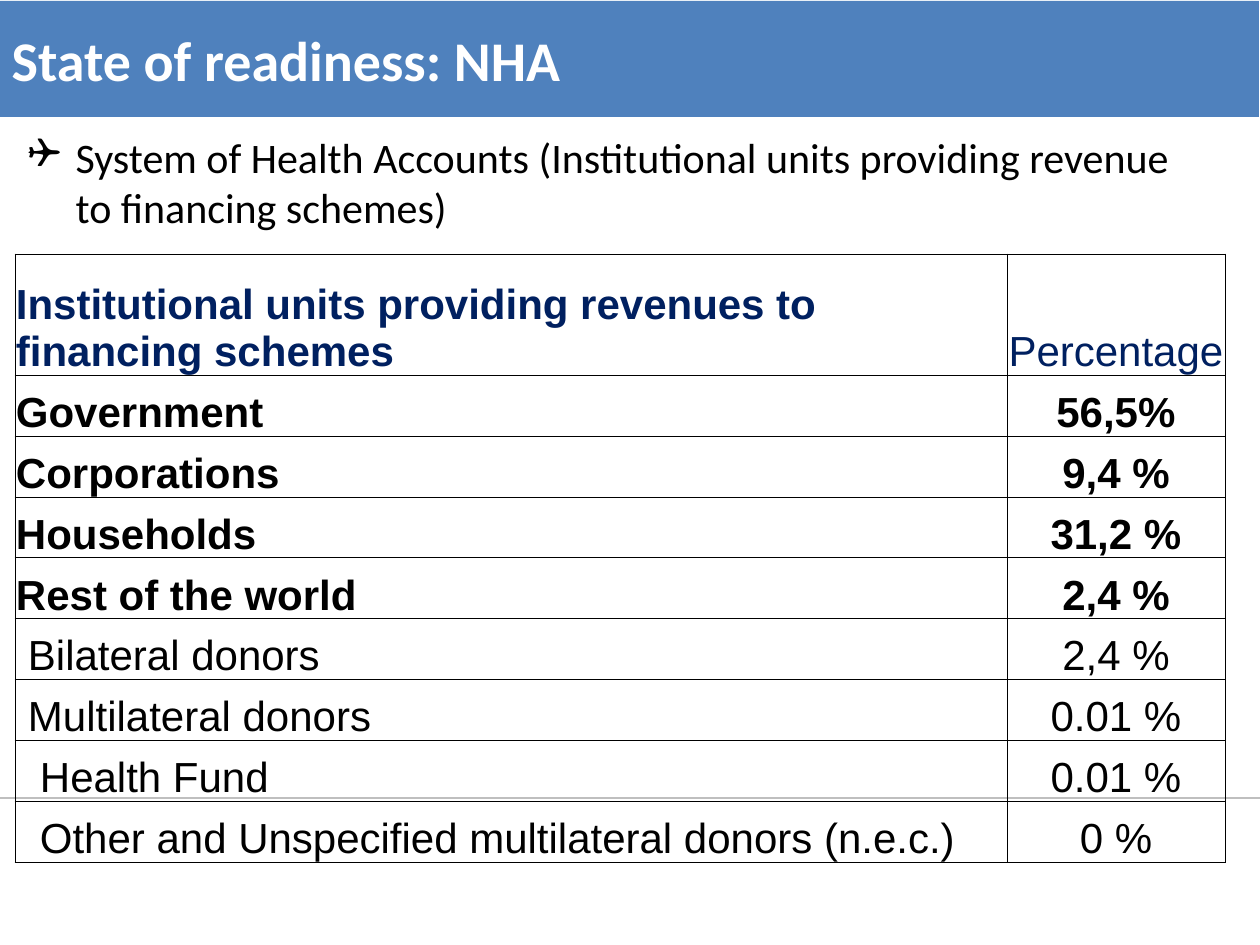
from lxml import etree
from pptx import Presentation
from pptx.dml.color import RGBColor
from pptx.enum import shapes, text
from pptx.oxml.ns import qn
from pptx.util import Pt

EMU_PER_PX = 914400 / 126
COLORS = {"band": "4F81BD", "white": "FFFFFF", "black": "000000",
          "navy": "002060", "rule": "BFBFBF"}
HEADER = ("Institutional units providing revenues to financing schemes", "Percentage")
# label, share, indent level
ROWS = [
    ("Government", "56,5%", 0),
    ("Corporations", "9,4 %", 0),
    ("Households", "31,2 %", 0),
    ("Rest of the world", "2,4 %", 0),
    ("Bilateral donors", "2,4 %", 1),
    ("Multilateral donors", "0.01 %", 1),
    ("Health Fund", "0.01 %", 2),
    ("Other and Unspecified multilateral donors (n.e.c.)", "0 %", 2),
]
COL_WIDTHS = (992, 218)
HEADER_HEIGHT, ROW_HEIGHT = 121, 61
INDENT = 12


def px(n):
    """Turn px into EMU."""
    return round(n * EMU_PER_PX)


def rgb(name):
    """Look up a colour by name."""
    return RGBColor.from_string(COLORS[name])


def place(sp, left, top, width, height):
    """Move and size a shape in px."""
    sp.left, sp.top, sp.width, sp.height = map(px, (left, top, width, height))


def format_text(tf, font, size, color, bold=False, align=text.PP_ALIGN.LEFT):
    """Format every paragraph and run of a text frame."""
    for p in tf.paragraphs:
        p.alignment = align
        for r in p.runs:
            r.font.name, r.font.size, r.font.bold = font, Pt(size), bold
            r.font.color.rgb = rgb(color)


def add_rule(s, y):
    """Draw the thin rule across the slide."""
    line = s.shapes.add_connector(shapes.MSO_CONNECTOR.STRAIGHT, 0, px(y), px(1260), px(y))
    line.line.color.rgb = rgb("rule")
    line.line.width = Pt(0.75)
    etree.SubElement(line._element.spPr, qn("a:effectLst"))


def set_title(s, title):
    """Fill the title placeholder as a coloured band."""
    sp = s.shapes.title
    place(sp, -1, 1, 1260, 116)
    sp.fill.solid()
    sp.fill.fore_color.rgb = rgb("band")
    tf = sp.text_frame
    tf.text = title
    tf.auto_size = text.MSO_AUTO_SIZE.NONE
    tf.vertical_anchor = text.MSO_ANCHOR.MIDDLE
    format_text(tf, "Calibri", 32, "white", bold=True)


def set_body(s, content):
    """Fill the body placeholder with one box-bulleted paragraph."""
    sp = s.placeholders[1]
    place(sp, 15, 125, 1201, 115)
    tf = sp.text_frame
    tf.text = content
    tf.auto_size = text.MSO_AUTO_SIZE.NONE
    format_text(tf, "Calibri", 24, "black")
    p = tf.paragraphs[0]
    p.space_before = Pt(0)
    pPr = p._p.get_or_add_pPr()
    pPr.set("marL", str(px(48)))
    pPr.set("indent", str(px(-48)))
    etree.SubElement(pPr, qn("a:buFont"), typeface="Wingdings")
    etree.SubElement(pPr, qn("a:buChar"), char="❑")


def add_borders(cell):
    """Draw a thin black line on all sides of a cell."""
    tcPr = cell._tc.get_or_add_tcPr()
    for i, side in enumerate(("lnL", "lnR", "lnT", "lnB")):
        ln = etree.Element(qn(f"a:{side}"), w=str(Pt(0.5)))
        fill = etree.SubElement(ln, qn("a:solidFill"))
        etree.SubElement(fill, qn("a:srgbClr"), val=COLORS["black"])
        tcPr.insert(i, ln)


def set_cell(cell, content, color, bold, align, level=0):
    """Write and format one table cell."""
    cell.text = content
    cell.fill.background()
    cell.vertical_anchor = text.MSO_ANCHOR.BOTTOM
    cell.margin_left = px(1 + INDENT * level)
    cell.margin_right = cell.margin_top = px(1)
    cell.margin_bottom = 0
    format_text(cell.text_frame, "Arial", 24, color, bold, align)
    add_borders(cell)


def add_revenue_table(s, left, top):
    """Add the table of revenue shares."""
    heights = [HEADER_HEIGHT] + [ROW_HEIGHT] * len(ROWS)
    table = s.shapes.add_table(len(heights), 2, px(left), px(top),
                               px(sum(COL_WIDTHS)), px(sum(heights))).table
    table.first_row = table.horz_banding = False
    for col, width in zip(table.columns, COL_WIDTHS):
        col.width = px(width)
    for row, height in zip(table.rows, heights):
        row.height = px(height)
    left_al, center = text.PP_ALIGN.LEFT, text.PP_ALIGN.CENTER
    set_cell(table.cell(0, 0), HEADER[0], "navy", True, left_al)
    set_cell(table.cell(0, 1), HEADER[1], "navy", False, center)
    for i, (label, share, level) in enumerate(ROWS, 1):
        set_cell(table.cell(i, 0), label, "black", level == 0, left_al, level)
        set_cell(table.cell(i, 1), share, "black", level == 0, center)


def main():
    """Build and save the slide."""
    prs = Presentation()
    prs.slide_width, prs.slide_height = px(1260), px(945)
    s = prs.slides.add_slide(prs.slide_layouts[1])
    add_rule(s, 798)
    set_title(s, "State of readiness: NHA")
    set_body(s, "System of Health Accounts (Institutional units providing "
                "revenue to financing schemes)")
    add_revenue_table(s, 15, 254)
    prs.save("out.pptx")


if __name__ == "__main__":
    main()
